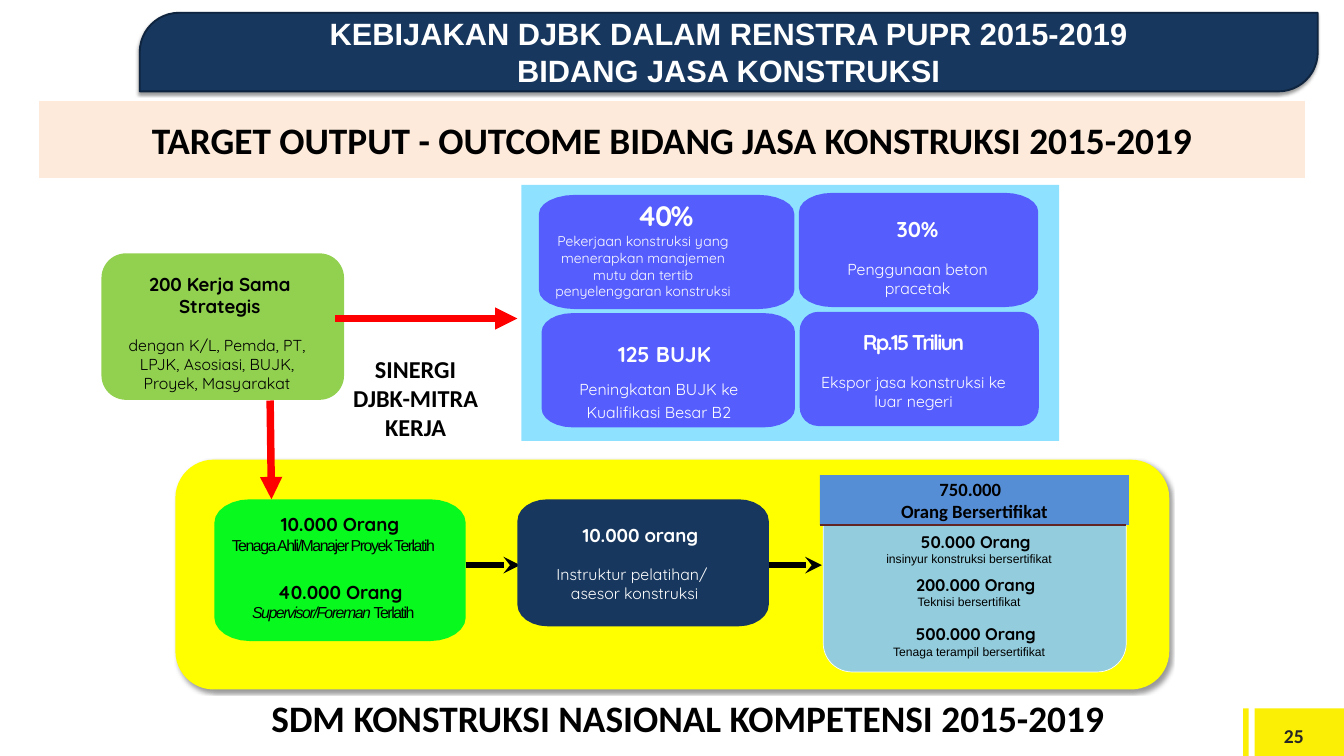
import math
from dataclasses import dataclass
from lxml import etree
from pptx import Presentation
from pptx.dml.color import RGBColor
from pptx.enum.shapes import MSO_CONNECTOR, MSO_SHAPE
from pptx.enum.text import MSO_ANCHOR, MSO_AUTO_SIZE, PP_ALIGN
from pptx.oxml.ns import qn
from pptx.util import Inches, Pt

RECT, ROUND = MSO_SHAPE.RECTANGLE, MSO_SHAPE.ROUNDED_RECTANGLE
DIAGONAL = MSO_SHAPE.ROUND_2_DIAG_RECTANGLE
STRAIGHT = MSO_CONNECTOR.STRAIGHT
TOP, MIDDLE = MSO_ANCHOR.TOP, MSO_ANCHOR.MIDDLE
CENTER, RIGHT = PP_ALIGN.CENTER, PP_ALIGN.RIGHT
NO_FIT = MSO_AUTO_SIZE.NONE

WHITE = RGBColor(0xFF, 0xFF, 0xFF)
BLACK = RGBColor(0, 0, 0)
CHARCOAL = RGBColor(0x26, 0x26, 0x26)
NAVY = RGBColor(0x17, 0x37, 0x5E)
DARK_NAVY = RGBColor(0x0F, 0x24, 0x3E)
YELLOW = RGBColor(0xFF, 0xFF, 0)
CORNER_YELLOW = RGBColor(0xFB, 0xEF, 0x05)
OLIVE = RGBColor(0x92, 0xD0, 0x50)
GREEN = RGBColor(0x07, 0xF9, 0x1E)
PEACH = RGBColor(0xFD, 0xEA, 0xDA)
SKY = RGBColor(0x8F, 0xE2, 0xFF)
VIOLET = RGBColor(0x55, 0x5D, 0xFD)
TEAL = RGBColor(0x93, 0xCD, 0xDD)
BLUE = RGBColor(0x55, 0x8E, 0xD5)
RED = RGBColor(0xFF, 0, 0)
MAROON = RGBColor(0x63, 0x25, 0x23)

Box = tuple[float, float, float, float]


@dataclass
class Para:
    text: str | tuple[str, str]  # a pair is an italic run and an upright run
    size: float
    bold: bool = False
    font: str = "Quicksand"
    color: RGBColor = BLACK
    left: float = 0
    right: float = 0
    before: float = 0
    after: float = 0
    line: float = 0
    track: float = 0
    align: PP_ALIGN = CENTER


@dataclass
class Target:
    """A block with elliptical corners and the text box over it."""
    box: Box
    radii: tuple[float, float]
    text_box: Box
    paras: list[Para]


def write(shape, paras: list[Para], insets: tuple[float, float, float] = (0, 0, 0), anchor=TOP) -> None:
    """Fill a shape with text; insets are sides, top and bottom."""
    tf = shape.text_frame
    tf.word_wrap, tf.auto_size, tf.vertical_anchor = True, NO_FIT, anchor
    tf.margin_left = tf.margin_right = Inches(insets[0])
    tf.margin_top, tf.margin_bottom = Inches(insets[1]), Inches(insets[2])
    for i, para in enumerate(paras):
        p = tf.paragraphs[0] if i == 0 else tf.add_paragraph()
        pair = isinstance(para.text, tuple)
        for j, text in enumerate(para.text if pair else [para.text]):
            r = p.add_run()
            r.text = text
            if pair:
                r.font.italic = j == 0
            if para.track:
                r.font._element.set("spc", str(round(para.track * 100))) if hasattr(
                    r.font, "_element") else r._r.get_or_add_rPr().set("spc", str(round(para.track * 100)))
        p.alignment = para.align
        p.space_before, p.space_after = Pt(para.before), Pt(para.after)
        if para.line:
            p.line_spacing = Pt(para.line)
        pPr = p._p.get_or_add_pPr()
        pPr.set("marL", str(Inches(para.left)))
        pPr.set("marR", str(Inches(para.right)))
        pPr.set("indent", "0")
        f = p.font
        f.name, f.size, f.bold, f.color.rgb = para.font, Pt(para.size), para.bold, para.color


def paint(shape, fill: RGBColor, line: RGBColor | None = None, width: float = 1):
    shape.shadow.inherit = False
    shape.fill.solid()
    shape.fill.fore_color.rgb = fill
    if line is None:
        shape.line.fill.background()
    else:
        shape.line.color.rgb, shape.line.width = line, Pt(width)
    return shape


def add_block(s, kind, box: Box, fill: RGBColor, line: RGBColor | None = None, width: float = 1):
    return paint(s.shapes.add_shape(kind, *map(Inches, box)), fill, line, width)


def add_soft_block(s, box: Box, radii: tuple[float, float], fill: RGBColor):
    """Draw a rectangle whose corners are quarter ellipses."""
    x, y, w, h = box
    rx, ry = radii
    corners = [(x + w - rx, y + h - ry), (x + rx, y + h - ry), (x + rx, y + ry), (x + w - rx, y + ry)]
    points = []
    for i, (cx, cy) in enumerate(corners):
        for step in range(7):
            a = math.radians(90 * i + 15 * step)
            points.append((Inches(cx + rx * math.cos(a)), Inches(cy + ry * math.sin(a))))
    fb = s.shapes.build_freeform(*points[0])
    fb.add_line_segments(points[1:], close=True)
    return paint(fb.convert_to_shape(), fill)


def add_text(s, box: Box, paras: list[Para], insets=(0, 0, 0), anchor=TOP) -> None:
    write(s.shapes.add_textbox(*map(Inches, box)), paras, insets, anchor)


def add_line(s, start, end, color: RGBColor, width: float, head: str = "") -> None:
    c = s.shapes.add_connector(STRAIGHT, *map(Inches, (*start, *end)))
    c.line.color.rgb, c.line.width = color, Pt(width)
    if head:
        etree.SubElement(c.line._get_or_add_ln(), qn("a:tailEnd"), type=head)
    etree.SubElement(c._element.spPr, qn("a:effectLst"))


def add_shadow(shape, degrees: int) -> None:
    effects = shape._element.spPr.find(qn("a:effectLst"))
    shadow = etree.SubElement(effects, qn("a:outerShdw"), blurRad=str(Pt(4)), dist=str(Pt(3)),
                              dir=str(degrees * 60000), algn="tl", rotWithShape="0")
    color = etree.SubElement(shadow, qn("a:srgbClr"), val="000000")
    etree.SubElement(color, qn("a:alpha"), val="40000")


def head(text: str, size: float, color: RGBColor = BLACK, track: float = -0.1, **kw) -> Para:
    return Para(text, size, True, color=color, track=track, **{"left": 0.17, "right": 0.17, **kw})


def calibri(text: str, size: float, **kw) -> Para:
    return Para(text, size, True, "Calibri", **kw)


def note(text: str, size: float = 17, **kw) -> Para:
    return Para(text, size, color=WHITE, **kw)


TARGETS = [
    Target((8.02, 2.9, 3.8, 1.7), (0.54, 0.28), (8.11, 2.96, 3.58, 1.8), [
        head("40%", 30, WHITE, -1.9, left=0.63, right=0.63),
        note("Pekerjaan konstruksi yang menerapkan manajemen mutu dan tertib penyelenggaran konstruksi",
             15, right=0.66)]),
    Target((11.89, 2.87, 3.56, 1.7), (0.5, 0.28), (12.47, 3.22, 3.01, 1.32), [
        head("30%", 23, WHITE, 0, left=0, right=0.64, after=19),
        note("Penggunaan beton pracetak", right=0.64)]),
    Target((8.06, 4.66, 3.77, 1.7), (0.46, 0.28), (8.37, 4.8, 3.04, 1.22), [
        head("125 BUJK", 23, WHITE, 0, line=47.5, after=9.5),
        note("Peningkatan BUJK ke Kualifikasi Besar B2", line=24.8, right=0.17)]),
    Target((11.9, 4.64, 3.56, 1.7), (0.28, 0.28), (12.16, 4.9, 3.04, 1.16), [
        head("Rp.15 Triliun", 23, WHITE, -1.9, left=0, after=19),
        note("Ekspor jasa konstruksi ke luar negeri", right=0.17)]),
]
CERTIFIED = [("50.000 Orang", "insinyur konstruksi bersertifikat", 0),
             ("200.000 Orang", "Teknisi bersertifikat", 9),
             ("500.000 Orang", "Tenaga terampil bersertifikat", 15.5)]
PADDING = (0.15, 0.07, 0.07)


def main() -> None:
    prs = Presentation()
    prs.slide_width, prs.slide_height = Inches(20), Inches(11.25)
    s = prs.slides.add_slide(prs.slide_layouts[5])

    banner = add_block(s, DIAGONAL, (2.08, 0.19, 17.53, 1.17), NAVY, DARK_NAVY, 2)
    banner.adjustments[0], banner.adjustments[1] = 0.5, 0
    add_shadow(banner, 135)
    title = s.shapes.title
    banner._element.addnext(title._element)
    title.left, title.top, title.width, title.height = map(Inches, (2.76, 0.25, 16.06, 1.05))
    write(title, [Para(t, 33, True, "Arial", WHITE, left=0.11) for t in (
        "KEBIJAKAN DJBK DALAM RENSTRA PUPR 2015-2019", "BIDANG JASA KONSTRUKSI")],
        (0.18, 0.09, 0.09), MIDDLE)
    subtitle = add_block(s, RECT, (0.56, 1.49, 18.88, 1.18), PEACH, WHITE, 2)
    write(subtitle, [calibri("TARGET OUTPUT - OUTCOME BIDANG JASA KONSTRUKSI 2015-2019", 40)],
          (0.17, 0.08, 0.08), MIDDLE)

    add_shadow(add_block(s, ROUND, (2.61, 6.84, 14.79, 3.42), YELLOW), 45)
    add_block(s, ROUND, (1.51, 3.77, 3.61, 2.18), OLIVE)
    add_text(s, (1.55, 4.06, 3.44, 1.36), [
        head("200 Kerja Sama Strategis", 20, after=19),
        Para("dengan K/L, Pemda, PT, LPJK, Asosiasi, BUJK, Proyek, Masyarakat", 17, left=0.17, right=0.25)])

    add_block(s, RECT, (7.76, 2.75, 8, 3.81), SKY)
    for t in TARGETS:
        add_soft_block(s, t.box, t.radii, VIOLET)
        add_text(s, t.text_box, t.paras)
    add_line(s, (4.99, 4.74), (7.7, 4.74), RED, 8, "triangle")
    add_line(s, (4.02, 5.96), (4.04, 7.43), RED, 8, "triangle")
    add_text(s, (4.63, 5.2, 3.11, 1.49), [calibri("SINERGI", 26), calibri("DJBK-MITRA KERJA", 26)], PADDING)

    trained = add_soft_block(s, (3.19, 7.43, 3.74, 2.11), (0.53, 0.35), GREEN)
    small = {"size": 17, "font": "Arial", "track": -1.6, "right": 0.2}
    write(trained, [head("10.000 Orang", 20), Para("Tenaga Ahli/Manajer Proyek Terlatih", **small),
                    head("40.000 Orang", 20, before=28),
                    Para(("Supervisor/Foreman", " Terlatih"), **small)], (0, 0.2, 0))

    add_block(s, ROUND, (12.25, 7.43, 4.51, 2.57), TEAL, WHITE, 0.75)
    certified = []
    for count, who, gap in CERTIFIED:
        certified += [head(count, 18, before=gap), Para(who, 13, font="Arial", right=0.2)]
    add_text(s, (12.65, 7.84, 3.74, 2.1), certified, PADDING)
    total = add_block(s, RECT, (12.2, 7.07, 4.6, 0.74), BLUE)
    write(total, [calibri("750.000", 20, right=0.12), calibri("Orang Bersertifikat", 20)], PADDING, MIDDLE)
    add_line(s, (12.2, 7.81), (16.76, 7.81), MAROON, 2.5)

    for x1, x2 in ((6.93, 7.74), (11.4, 12.23)):
        add_line(s, (x1, 8.41), (x2, 8.41), BLACK, 6, "stealth")
    add_soft_block(s, (7.7, 7.43, 3.74, 1.89), (0.45, 0.32), NAVY)
    add_text(s, (7.76, 7.8, 3.54, 1.45), [
        head("10.000 orang", 20, WHITE, after=19),
        note("Instruktur pelatihan/", right=0.25), note("asesor konstruksi", right=0.17)])

    add_text(s, (2.29, 10.27, 15.89, 0.82),
             [calibri("SDM KONSTRUKSI NASIONAL KOMPETENSI 2015-2019", 40)], PADDING)
    for x, w in ((18.67, 1.33), (18.5, 0.08)):
        add_block(s, RECT, (x, 10.54, w, 0.71), CORNER_YELLOW)
    add_text(s, (18.79, 10.64, 0.79, 0.61), [calibri("25", 21, color=CHARCOAL, align=RIGHT)],
             (0.18, 0.09, 0.09), MIDDLE)
    prs.save("out.pptx")


if __name__ == "__main__":
    main()
